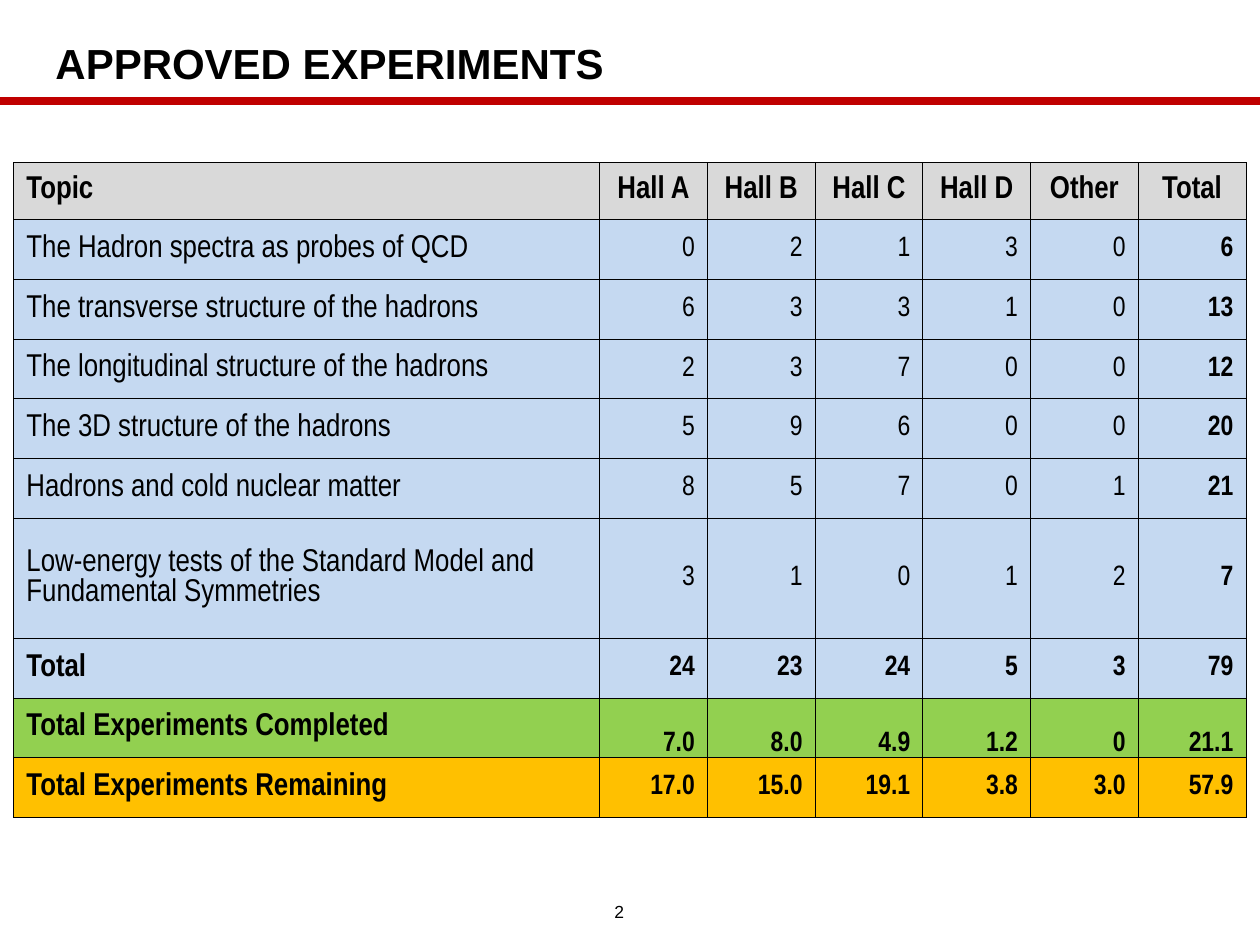
from dataclasses import dataclass
from pptx import Presentation
from pptx.dml.color import RGBColor as RGB
from pptx.enum.shapes import MSO_CONNECTOR as CONN
from pptx.enum.text import MSO_ANCHOR as ANCHOR, MSO_AUTO_SIZE as FIT, PP_ALIGN as ALIGN
from pptx.oxml import parse_xml
from pptx.oxml.ns import nsdecls
from pptx.util import Inches, Pt


@dataclass(frozen=True)
class Theme:
    black: str = "000000"
    rule: str = "C00000"
    header: str = "D9D9D9"
    topic: str = "C5D9F1"
    completed: str = "92D050"
    remaining: str = "FFC000"
    font: str = "Arial"
    table_font: str = "Arial Narrow"
    title_size: int = 24
    label_size: int = 18
    value_size: int = 16
    number_size: int = 10


T = Theme()

HEADER = ["Topic", "Hall A", "Hall B", "Hall C", "Hall D", "Other", "Total"]
TOPICS = [
    ["The Hadron spectra as probes of QCD", "0", "2", "1", "3", "0", "6"],
    ["The transverse structure of the hadrons", "6", "3", "3", "1", "0", "13"],
    ["The longitudinal structure of the hadrons", "2", "3", "7", "0", "0", "12"],
    ["The 3D structure of the hadrons", "5", "9", "6", "0", "0", "20"],
    ["Hadrons and cold nuclear matter", "8", "5", "7", "0", "1", "21"],
    ["Low-energy tests of the Standard Model and Fundamental Symmetries",
     "3", "1", "0", "1", "2", "7"],
]
TOTAL = ["Total", "24", "23", "24", "5", "3", "79"]
COMPLETED = ["Total Experiments Completed", "7.0", "8.0", "4.9", "1.2", "0", "21.1"]
REMAINING = ["Total Experiments Remaining", "17.0", "15.0", "19.1", "3.8", "3.0", "57.9"]

ROWS = [HEADER, *TOPICS, TOTAL, COMPLETED, REMAINING]
FILLS = [T.header] + [T.topic] * (len(TOPICS) + 1) + [T.completed, T.remaining]
DOUBLE_ROW = len(TOPICS)
TABLE_WIDTH, TABLE_HEIGHT = 9.78, 5.2
TOPIC_WIDTH, HEADER_HEIGHT = 4.65, 0.45


def set_attrs(obj, values):
    for name, value in values.items():
        setattr(obj, name, value)


def write(tf, text, size, font=T.font, bold=False, align=ALIGN.LEFT):
    p = tf.paragraphs[0]
    p.alignment = align
    r = p.add_run()
    r.text = text
    set_attrs(r.font, {"name": font, "size": Pt(size), "bold": bold})
    r.font.color.rgb = RGB.from_string(T.black)
    return p


def place(sp, left, top, width, height):
    set_attrs(sp, {"left": Inches(left), "top": Inches(top),
                   "width": Inches(width), "height": Inches(height)})
    set_attrs(sp.text_frame, {"word_wrap": True, "auto_size": FIT.NONE,
                              "vertical_anchor": ANCHOR.MIDDLE})


def add_title(s, text):
    sp = s.shapes.title
    place(sp, 0.34, 0.26, 9.26, 0.53)
    write(sp.text_frame, text, T.title_size, bold=True).line_spacing = 0.9


def add_rule(s):
    line = s.shapes.add_connector(CONN.STRAIGHT, Inches(-0.01), Inches(0.8),
                                  Inches(10), Inches(0.8))
    line.line.color.rgb = RGB.from_string(T.rule)
    line.line.width = Pt(4.5)
    line._element.spPr.append(parse_xml(f"<a:effectLst {nsdecls('a')}/>"))


def add_slide_number(s, text):
    sp = s.shapes.add_textbox(0, 0, 0, 0)
    place(sp, 4.62, 7.07, 0.59, 0.33)
    write(sp.text_frame, text, T.number_size, align=ALIGN.CENTER)


def set_borders(cell):
    tc_pr = cell._tc.get_or_add_tcPr()
    for i, side in enumerate(("lnL", "lnR", "lnT", "lnB")):
        tc_pr.insert(i, parse_xml(
            f'<a:{side} {nsdecls("a")} w="{Pt(0.5)}"><a:solidFill>'
            f'<a:srgbClr val="{T.black}"/></a:solidFill></a:{side}>'))


def format_cell(cell, row, col):
    is_header, is_label = row == 0, col == 0
    is_topic = 0 < row <= len(TOPICS)
    is_total = col == len(HEADER) - 1
    at_bottom = ROWS[row] is COMPLETED and not is_label
    set_attrs(cell, {
        "margin_left": Inches(0.1 if is_label else 0),
        "margin_right": Inches(0 if is_header or is_label else 0.1),
        "margin_top": 0,
        "margin_bottom": 0,
        "vertical_anchor": ANCHOR.BOTTOM if at_bottom else ANCHOR.MIDDLE,
    })
    cell.fill.solid()
    cell.fill.fore_color.rgb = RGB.from_string(FILLS[row])
    set_borders(cell)
    align = ALIGN.LEFT if is_label else ALIGN.CENTER if is_header else ALIGN.RIGHT
    size = T.label_size if is_header or is_label else T.value_size
    write(cell.text_frame, ROWS[row][col], size, T.table_font,
          bold=not is_topic or is_total, align=align)


def add_experiment_table(s):
    table = s.shapes.add_table(len(ROWS), len(HEADER), Inches(0.11), Inches(1.29),
                               Inches(TABLE_WIDTH), Inches(TABLE_HEIGHT)).table
    set_attrs(table, {"first_row": False, "horz_banding": False})
    value_width = (TABLE_WIDTH - TOPIC_WIDTH) / (len(HEADER) - 1)
    row_height = (TABLE_HEIGHT - HEADER_HEIGHT) / len(ROWS)
    for i, column in enumerate(table.columns):
        column.width = Inches(value_width if i else TOPIC_WIDTH)
    for i, row in enumerate(table.rows):
        scale = 2 if i == DOUBLE_ROW else 1
        row.height = Inches(row_height * scale if i else HEADER_HEIGHT)
        for j, cell in enumerate(row.cells):
            format_cell(cell, i, j)


def main():
    prs = Presentation()
    set_attrs(prs, {"slide_width": Inches(10), "slide_height": Inches(7.5)})
    s = prs.slides.add_slide(prs.slide_layouts[5])
    add_rule(s)
    add_title(s, "APPROVED EXPERIMENTS")
    add_slide_number(s, "2")
    add_experiment_table(s)
    prs.save("out.pptx")


if __name__ == "__main__":
    main()
